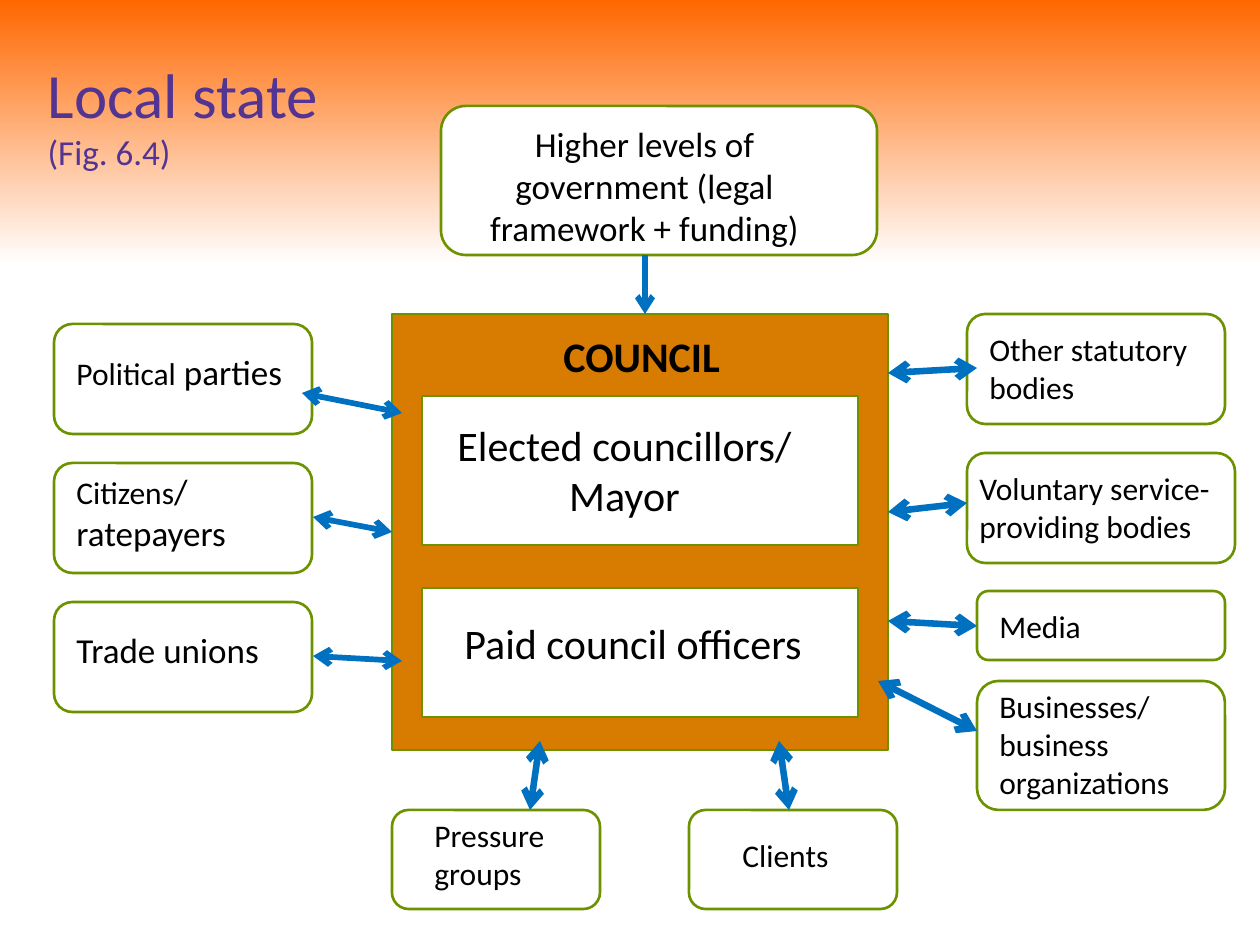
from copy import deepcopy

from pptx import Presentation
from pptx.dml.color import RGBColor
from pptx.enum.shapes import MSO_CONNECTOR as CONN, MSO_SHAPE as SHAPE
from pptx.enum.text import MSO_ANCHOR as ANCHOR, PP_ALIGN as ALIGN
from pptx.oxml.ns import qn
from pptx.util import Pt
from lxml.etree import SubElement

PX = 914400 / 126  # EMU per px
FONT = "Calibri"
COLORS = {"sky": "FF6700", "white": "FFFFFF", "title": "533492", "council": "D77C01",
          "border": "6D9200", "arrow": "0070C0", "text": "000000"}


def px(*values):
    return [round(v * PX) for v in values]


def color(name):
    return RGBColor.from_string(COLORS[name])


def add_run(p, text, size, name="text", bold=False):
    r = p.add_run()
    r.text = text
    r.font.name, r.font.size, r.font.bold = FONT, Pt(size), bold
    r.font.color.rgb = color(name)


def add_box(slide, box, kind=SHAPE.ROUNDED_RECTANGLE, fill="white"):
    s = slide.shapes.add_shape(kind, *px(*box))
    s.shadow.inherit = False
    s.fill.solid()
    s.fill.fore_color.rgb = color(fill)
    s.line.color.rgb = color("border")
    s.line.width = Pt(1.5)


def add_label(slide, box, runs, align=ALIGN.LEFT, bold=False):
    tf = slide.shapes.add_textbox(*px(*box)).text_frame
    tf.word_wrap = True
    p = tf.paragraphs[0]
    p.alignment = align
    for text, size in runs:
        add_run(p, text, size, bold=bold)


def add_card(slide, box, label, runs, kind=SHAPE.ROUNDED_RECTANGLE, align=ALIGN.LEFT):
    """A bordered box with a label placed relative to its corner."""
    x, y = box[:2]
    dx, dy, w, h = label
    add_box(slide, box, kind)
    add_label(slide, (x + dx, y + dy, w, h), runs, align)


def add_arrow(slide, start, end, width, both=True):
    s = slide.shapes.add_connector(CONN.STRAIGHT, *px(*start, *end))
    s.line.color.rgb = color("arrow")
    s.line.width = Pt(width)
    ln = s.line._get_or_add_ln()
    for tag in ("a:headEnd", "a:tailEnd") if both else ("a:tailEnd",):
        SubElement(ln, qn(tag), type="arrow")
    SubElement(s._element.spPr, qn("a:effectLst"))


def add_background(slide):
    fill = slide.background.fill
    fill.gradient()
    fill.gradient_angle = 270
    for stop, (pos, name) in zip(fill.gradient_stops, ((0, "sky"), (0.28, "white"))):
        stop.position = pos
        stop.color.rgb = color(name)
    stops = slide._element.find(".//" + qn("a:gsLst"))
    last = deepcopy(stops[-1])
    last.set("pos", "100000")
    stops.append(last)


def add_title(slide, box):
    s = slide.shapes.title
    s.left, s.top, s.width, s.height = px(*box)
    tf = s.text_frame
    tf.word_wrap = True
    tf.vertical_anchor = ANCHOR.MIDDLE
    p = tf.paragraphs[0]
    p.alignment = ALIGN.LEFT
    add_run(p, "Local state ", 36, "title")
    add_run(p, "(Fig. 6.4)", 20, "title")


def add_council(slide, box):
    x, y, w, _ = box
    add_box(slide, box, SHAPE.RECTANGLE, "council")
    add_label(slide, (x + 159, y + 10, 208, 63), [("COUNCIL", 24)], bold=True)
    inner_x, inner_w = x + 30, w - 60
    add_card(slide, (inner_x, y + 82, inner_w, 149), (19, 17, 367, 115),
             [("Elected councillors/ Mayor", 24)], SHAPE.RECTANGLE, ALIGN.CENTER)
    add_card(slide, (inner_x, y + 274, inner_w, 129), (30, 23, 387, 63),
             [("Paid council officers", 24)], SHAPE.RECTANGLE)


def add_government(slide, box):
    add_card(slide, box, (0, 10, 407, 140),
             [("Higher levels of government (legal framework + funding)", 20)],
             align=ALIGN.CENTER)


def add_left_column(slide, x, y):
    groups = [((20, 248), [("Political", 18), (" parties", 20)]),
              ((0, 238), [("Citizens", 18), ("/ ratepayers", 20)]),
              ((20, 208), [("Trade unions", 20)])]
    for i, ((dy, w), runs) in enumerate(groups):
        add_card(slide, (x, y + 139 * i, 258, 110), (10, dy, w, 80), runs)


def add_right_column(slide, x, y):
    # offset and size of the card, label within it, text
    groups = [((0, 0, 258, 110), (10, 10, 238, 89), "Other statutory bodies"),
              ((0, 139, 268, 110), (0, 10, 258, 89), "Voluntary service-providing bodies"),
              ((10, 277, 248, 69), (10, 10, 159, 50), "Media"),
              ((10, 367, 248, 129), (10, 0, 238, 127), "Businesses/ business organizations")]
    for (dx, dy, w, h), label, text in groups:
        add_card(slide, (x + dx, y + dy, w, h), label, [(text, 18)])


def add_bottom_row(slide, x, y):
    groups = [((30, 0, 159, 89), "Pressure groups"), ((41, 20, 118, 50), "Clients")]
    for i, (label, text) in enumerate(groups):
        add_card(slide, (x + 297 * i, y, 208, 99), label, [(text, 18)])


def add_arrows(slide):
    add_arrow(slide, (645, 255), (645, 314), 3.25, both=False)
    left = [((302, 393), (402, 413)), ((313, 517), (392, 532)), ((313, 656), (402, 661))]
    right = [((888, 373), (977, 368)), ((888, 512), (967, 503)),
             ((888, 621), (977, 626)), ((878, 681), (977, 731))]
    bottom = [((530, 810), (540, 741)), ((789, 810), (779, 741))]
    for start, end in left:
        add_arrow(slide, start, end, 3.25)
    for start, end in right + bottom:
        add_arrow(slide, start, end, 3.75)


def main():
    prs = Presentation()
    prs.slide_width, prs.slide_height = px(1260, 945)
    slide = prs.slides.add_slide(prs.slide_layouts[5])
    add_background(slide)
    add_title(slide, (35, 26, 309, 176))
    add_council(slide, (392, 314, 496, 436))
    add_government(slide, (441, 106, 436, 149))
    add_left_column(slide, 54, 324)
    add_right_column(slide, 967, 314)
    add_bottom_row(slide, 392, 810)
    add_arrows(slide)
    prs.save("out.pptx")


if __name__ == "__main__":
    main()
